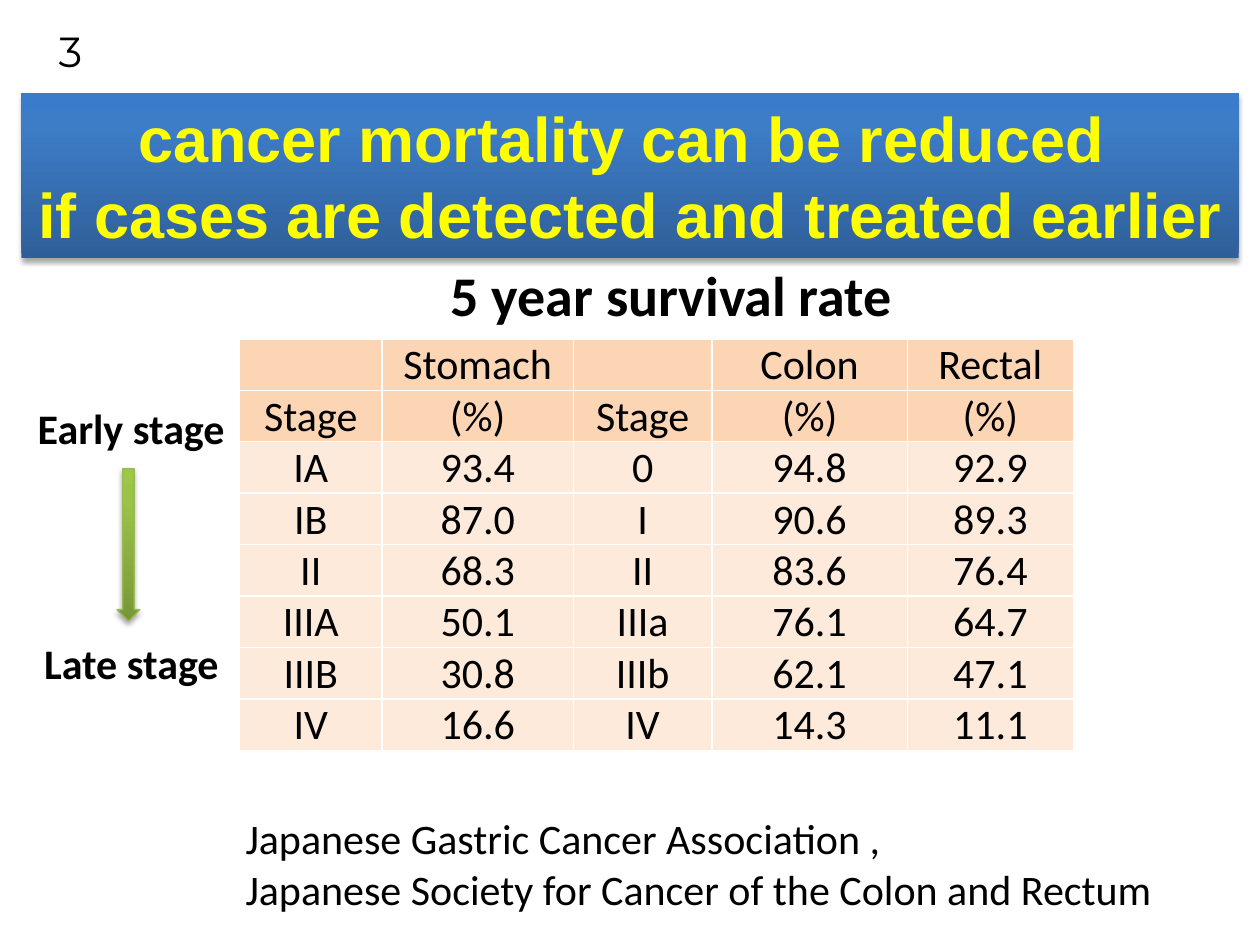
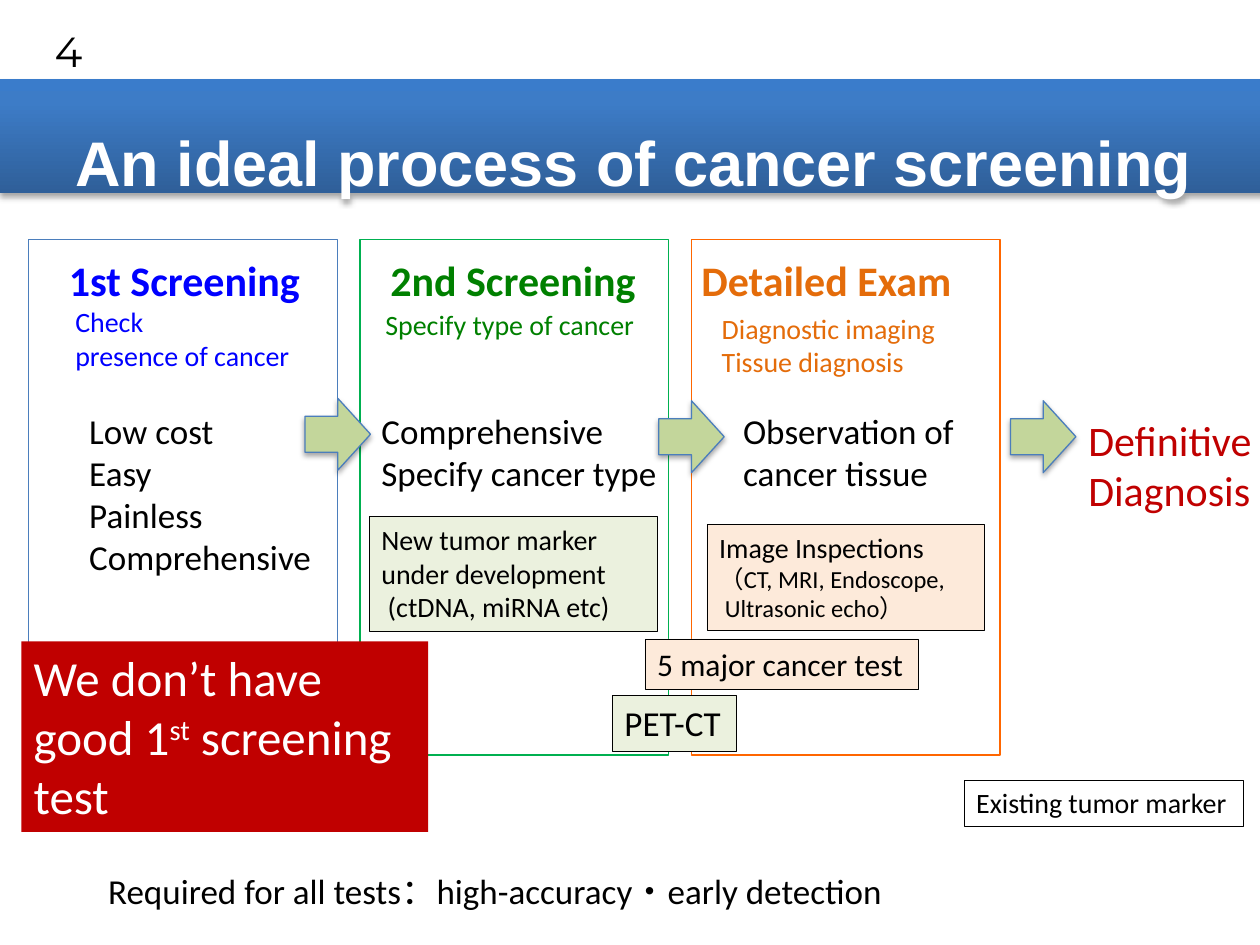
import copy
import lxml.etree
import pptx
import pptx.dml.color
import pptx.enum.shapes
import pptx.enum.text
import pptx.oxml.ns
import pptx.util

Cm = pptx.util.Cm
Pt = pptx.util.Pt
qn = pptx.oxml.ns.qn
Kind = pptx.enum.shapes.MSO_SHAPE
Align = pptx.enum.text.PP_ALIGN
Hold = pptx.enum.text.MSO_ANCHOR
Fit = pptx.enum.text.MSO_AUTO_SIZE


class Theme:
    body, title, page = "Calibri", "Arial", "Montserrat"
    black, white, yellow = "000000", "FFFFFF", "FFFF00"
    blue, green, orange, red = "0000FF", "008000", "E46C0A", "C00000"
    edge, lime, amber = "4B7EBC", "00B050", "FF6600"
    peach, cream, mint, leaf = "FCD5B5", "FDEADA", "EBF1DE", "C3D69B"
    band = [(0, "2F5F99"), (0.8, "3D7CC7"), (1, "3A7CCB")]
    fall = [(0, "779737"), (0.8, "9BC348"), (1, "9DC746")]
    fall_edge = "98B955"
    tiny, small, label, text, head, large, huge, top = 14, 16, 18, 20, 24, 28, 32, 36


def rgb(code):
    return pptx.dml.color.RGBColor.from_string(code)


def look(size, color=Theme.black, **more):
    return {"size": size, "color": color, "name": Theme.body, **more}


def style(run, form):
    """Apply a dict of format values to one run."""
    for key, value in form.items():
        if key == "color":
            run.font.color.rgb = rgb(value)
        elif key == "raise":
            run._r.get_or_add_rPr().set("baseline", value)
        else:
            setattr(run.font, key, Pt(value) if key == "size" else value)


def write(frame, lines, form, align=Align.LEFT, space=None):
    """A line is a string, or a list of (text, extra format) runs."""
    for i, line in enumerate(lines):
        para = frame.add_paragraph() if i else frame.paragraphs[0]
        para.alignment = align
        if space:
            para.line_spacing = space
        for words, extra in [(line, {})] if isinstance(line, str) else line:
            run = para.add_run()
            run.text = words
            style(run, {**form, **extra})


def setup(frame, wrap=True, fit=Fit.SHAPE_TO_FIT_TEXT, hold=Hold.TOP):
    frame.word_wrap = wrap
    frame.auto_size = fit
    frame.vertical_anchor = hold


def label(slide, box, lines, form, wrap=False):
    frame = slide.shapes.add_textbox(*map(Cm, box)).text_frame
    setup(frame, wrap)
    write(frame, lines, form)


def block(slide, box, kind=Kind.RECTANGLE, fill=None, line=None, width=0.75, shade=False):
    """Draw a shape; fill is a colour, a list of gradient stops or None."""
    shape = slide.shapes.add_shape(kind, *map(Cm, box))
    shape.shadow.inherit = False
    props = shape.element.spPr
    if isinstance(fill, list):
        shape.fill.gradient()
        shape.fill.gradient_angle = 90
        stops = props.find(qn("a:gradFill")).find(qn("a:gsLst"))
        stops.append(copy.deepcopy(stops[0]))
        for stop, (place, color) in zip(shape.fill.gradient_stops, fill):
            stop.position = place
            stop.color.rgb = rgb(color)
    elif fill:
        shape.fill.solid()
        shape.fill.fore_color.rgb = rgb(fill)
    else:
        shape.fill.background()
    if line:
        shape.line.color.rgb = rgb(line)
        shape.line.width = Pt(width)
    else:
        shape.line.fill.background()
    if shade:
        cast = lxml.etree.SubElement(
            props.find(qn("a:effectLst")), qn("a:outerShdw"),
            blurRad="39400", dist="22900", dir="5400000", rotWithShape="0")
        tone = lxml.etree.SubElement(cast, qn("a:srgbClr"), val=Theme.black)
        lxml.etree.SubElement(tone, qn("a:alpha"), val="35000")
    return shape


def band(slide, box, lines, color, space=None):
    frame = block(slide, box, fill=Theme.band, shade=True).text_frame
    setup(frame)
    write(frame, lines, look(Theme.top, color, name=Theme.title, bold=True),
          Align.CENTER, space)


def number(slide, page):
    frame = slide.shapes.add_textbox(0, 0, Cm(1.91), Cm(2.03)).text_frame
    setup(frame, fit=Fit.NONE, hold=Hold.MIDDLE)
    write(frame, [str(page)], look(Theme.head, name=Theme.page), Align.RIGHT)


def tag(slide, box, lines, size, fill, wrap=False):
    frame = block(slide, box, fill=fill, line=Theme.black, width=0.25).text_frame
    setup(frame, wrap)
    write(frame, lines, look(size))


def trend(slide, box):
    """Early stage, falling arrow, late stage."""
    left, top, width, height = box
    form = look(Theme.head, bold=True)
    label(slide, (left, top, width, 1.27), ["Early stage"], form)
    block(slide, (left + 1.85, top + 1.47, 0.46, 3.07), Kind.DOWN_ARROW,
          Theme.fall, Theme.fall_edge, shade=True)
    label(slide, (left + 0.13, top + height - 1.27, 4.06, 1.27), ["Late stage"], form)


def rule(cell):
    """White lines on all four sides of a cell."""
    props = cell._tc.get_or_add_tcPr()
    for i, side in enumerate(("lnL", "lnR", "lnT", "lnB")):
        line = lxml.etree.Element(qn("a:" + side), w="12700")
        paint = lxml.etree.SubElement(line, qn("a:solidFill"))
        lxml.etree.SubElement(paint, qn("a:srgbClr"), val=Theme.white)
        props.insert(i, line)


def chances(slide, box, widths, rows):
    """Survival table with two heading rows."""
    grid = slide.shapes.add_table(len(rows), len(widths), *map(Cm, box)).table
    grid.first_row = grid.horz_banding = False
    for col, width in zip(grid.columns, widths):
        col.width = Cm(width)
    for r, row in enumerate(rows):
        grid.rows[r].height = Cm(0.99 if r else 0.91)
        for c, words in enumerate(row):
            cell = grid.cell(r, c)
            cell.fill.solid()
            cell.fill.fore_color.rgb = rgb(Theme.peach if r < 2 else Theme.cream)
            rule(cell)
            if words:
                edges = {"margin_left": 0.02, "margin_right": 0.02,
                         "margin_top": 0.02, "margin_bottom": 0}
                for key, value in edges.items():
                    setattr(cell, key, Cm(value))
                cell.vertical_anchor = Hold.MIDDLE
                write(cell.text_frame, [words], look(Theme.head), Align.CENTER)


def column(slide, box, edge, color, head, note, points):
    """A framed step; each part is (dx, dy, width, height, wrap, lines)."""
    block(slide, box, line=edge)
    forms = (look(Theme.head, color, bold=True), look(Theme.small, color),
             look(Theme.text))
    for part, form in zip((head, note, points), forms):
        dx, dy, width, height, wrap, lines = part
        label(slide, (box[0] + dx, box[1] + dy, width, height), lines, form, wrap)


def alert(slide, box):
    frame = block(slide, box, fill=Theme.red).text_frame
    setup(frame)
    write(frame, ["We don’t have",
                  [("good 1", {}), ("st", {"raise": "30000"}), (" screening test", {})]],
          look(Theme.large, Theme.white))


def survey(slide):
    """Survival by stage."""
    trend(slide, (0.51, 7.98, 4.32, 6.02))
    band(slide, (0.43, 1.88, 24.54, 3.33),
         ["cancer mortality can be reduced ",
          "if cases are detected and treated earlier"], Theme.yellow)
    label(slide, (8.84, 5.13, 9.47, 1.63), ["5 year survival rate"],
          look(Theme.huge, bold=True))
    chances(slide, (4.83, 6.83, 16.81, 7.84), (2.87, 3.86, 2.79, 3.94, 3.35), [
        ("", "Stomach", "", "Colon", "Rectal"),
        ("Stage", "(%)", "Stage", "(%)", "(%)"),
        ("IA", "93.4", "0", "94.8", "92.9"),
        ("IB", "87.0", "I", "90.6", "89.3"),
        ("II", "68.3", "II", "83.6", "76.4"),
        ("IIIA", "50.1", "IIIa", "76.1", "64.7"),
        ("IIIB", "30.8", "IIIb", "62.1", "47.1"),
        ("IV", "16.6", "IV", "14.3", "11.1"),
    ])
    label(slide, (4.7, 16.26, 18.95, 2.31),
          ["Japanese Gastric Cancer Association ,",
           "Japanese Society for Cancer of the Colon and Rectum"], look(Theme.head))
    number(slide, 3)


def process(slide):
    """Screening steps from first test to diagnosis."""
    band(slide, (0, 1.6, 25.55, 2.29), ["An ideal process of cancer screening"],
         Theme.white, 1.5)
    steps = [
        (Theme.edge, Theme.blue,
         (0.56, 0.18, 5.21, 1.27, False, ["1st Screening"]),
         (0.69, 1.19, 5.74, 1.63, True, ["Check", "presence of cancer"]),
         (0.97, 3.3, 5.03, 3.68, False,
          ["Low cost", "Easy", "Painless", "Comprehensive"])),
        (Theme.lime, Theme.green,
         (0.36, 0.18, 5.51, 1.27, False, ["2nd Screening"]),
         (0.26, 1.24, 6.78, 0.94, True, ["Specify type of cancer"]),
         (0.18, 3.3, 6.12, 1.96, False, ["Comprehensive", "Specify cancer type"])),
        (Theme.amber, Theme.orange,
         (-0.05, 0.18, 5.61, 1.27, False, ["Detailed Exam"]),
         (0.36, 1.32, 4.85, 1.63, False, ["Diagnostic imaging", "Tissue diagnosis"]),
         (0.79, 3.3, 5.21, 1.96, True, ["Observation of cancer tissue"])),
    ]
    for i, step in enumerate(steps):
        column(slide, (0.58 + 6.68 * i, 4.83, 6.22, 10.39), *step)

    # Arrows to the outcome
    for left, top in ((6.15, 8.03), (13.28, 8.08), (20.37, 8.08)):
        block(slide, (left, top, 1.32, 1.45), Kind.RIGHT_ARROW,
              Theme.leaf, Theme.edge, shade=True)
    label(slide, (21.69, 8.23, 3.86, 2.31), ["Definitive", "Diagnosis"],
          look(Theme.head, Theme.red))

    # Requirement line, with room to stay on one line
    label(slide, (1.93, 17.4, 21, 1.12),
          ["Required for all tests：high-accuracy・early detection"],
          look(Theme.text), True)

    # Tests in use or under way
    tag(slide, (13, 12.88, 5.51, 1.02), ["5 major cancer test"], Theme.label, Theme.cream)
    tag(slide, (12.34, 14.02, 2.51, 1.12), ["PET-CT"], Theme.text, Theme.mint)
    tag(slide, (19.43, 15.72, 5.64, 0.94), ["Existing tumor marker"], Theme.small, None)
    tag(slide, (7.44, 10.41, 5.82, 2.31),
        ["New tumor marker under development", " (ctDNA, miRNA etc)"],
        Theme.small, Theme.mint, True)
    fine = {"size": Theme.tiny}
    tag(slide, (14.25, 10.57, 5.59, 2.13),
        ["Image Inspections", [("（CT, MRI, Endoscope,", fine)],
         [(" Ultrasonic echo）", fine)]], Theme.small, Theme.cream, True)
    alert(slide, (0.43, 12.93, 8.2, 3.84))
    number(slide, 4)


def main():
    deck = pptx.Presentation()
    deck.slide_width, deck.slide_height = Cm(25.4), Cm(19.05)
    for build in (survey, process):
        build(deck.slides.add_slide(deck.slide_layouts[6]))
    deck.save("out.pptx")


if __name__ == "__main__":
    main()
